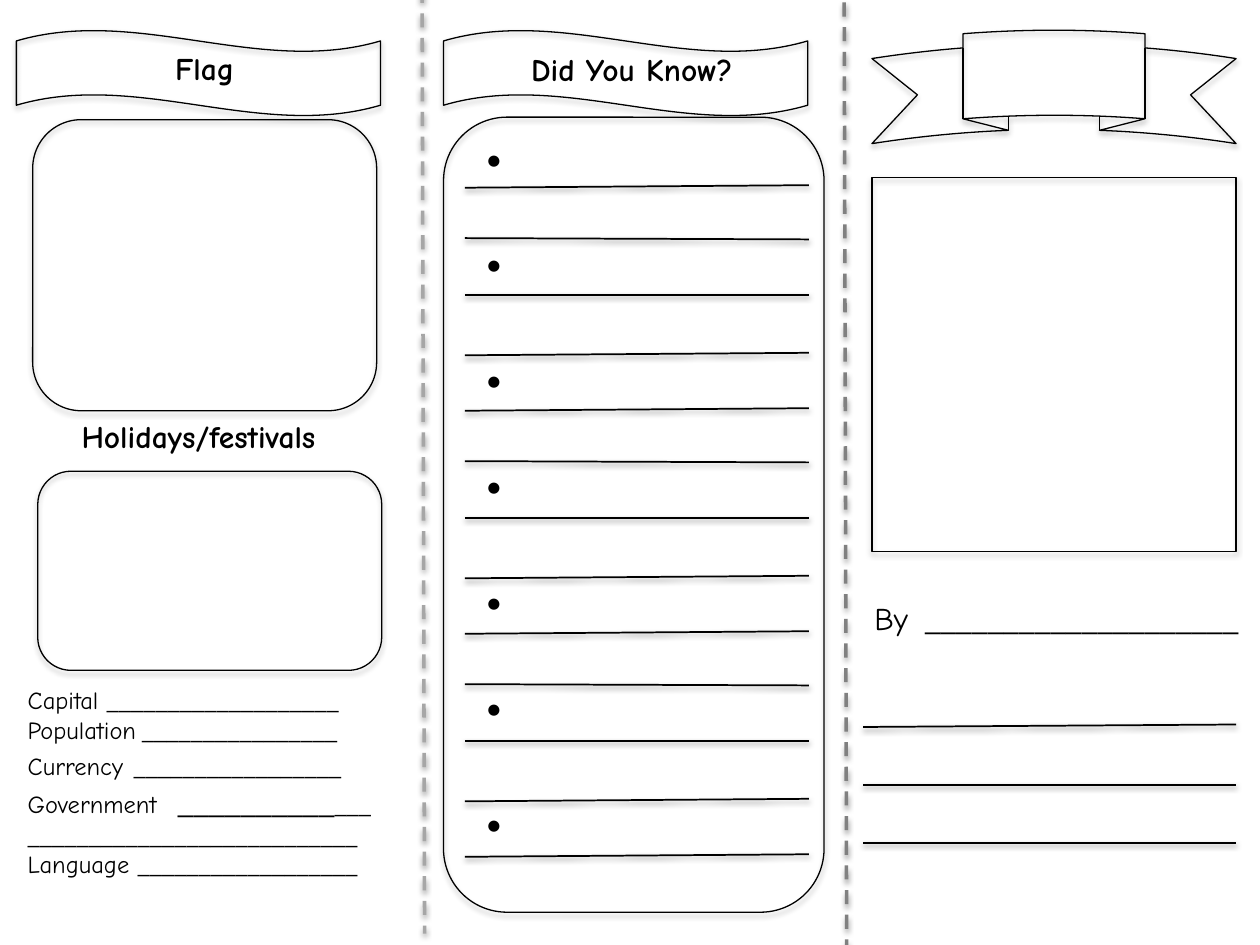
from dataclasses import dataclass
from typing import NamedTuple

from lxml import etree
from pptx import Presentation
from pptx.dml.color import RGBColor
from pptx.enum.dml import MSO_LINE
from pptx.enum.shapes import MSO_CONNECTOR, MSO_SHAPE
from pptx.enum.text import MSO_AUTO_SIZE, PP_ALIGN
from pptx.oxml.ns import qn
from pptx.util import Inches, Pt

BLACK = RGBColor(0x00, 0x00, 0x00)
GREY = RGBColor(0x80, 0x80, 0x80)
SILVER = RGBColor(0xA6, 0xA6, 0xA6)
ROUND = MSO_SHAPE.ROUNDED_RECTANGLE
RECT = MSO_SHAPE.RECTANGLE
WAVE = MSO_SHAPE.WAVE
RIBBON = MSO_SHAPE.CURVED_UP_RIBBON
STRAIGHT = MSO_CONNECTOR.STRAIGHT
DASH = MSO_LINE.DASH
GROW = MSO_AUTO_SIZE.SHAPE_TO_FIT_TEXT
LEFT = PP_ALIGN.LEFT
CENTER = PP_ALIGN.CENTER

HAND = "Comic Neue"
PLAIN = "Calibri"
CELL = 0.1
COLS, ROWS = 100, 75


class Area(NamedTuple):
    col: float
    row: float
    wide: float
    high: float


class Span(NamedTuple):
    col: float
    row: float
    end_col: float
    end_row: float


class Piece(NamedTuple):
    text: str
    font: str
    size: float
    bold: bool = False


@dataclass
class Frame:
    kind: int
    area: Area


@dataclass
class Rule:
    span: Span
    color: RGBColor = BLACK
    width: float = 1
    dashed: bool = False


@dataclass
class Line:
    pieces: list[Piece]
    tab: float = 0


@dataclass
class Label:
    area: Area
    lines: list[Line]
    align: int = LEFT


def cells(count: float) -> int:
    return Inches(count * CELL)


def shade(item, drop: float, alpha: int) -> None:
    effects = etree.SubElement(item._element.spPr, qn("a:effectLst"))
    shadow = etree.SubElement(
        effects, qn("a:outerShdw"), blurRad=str(Pt(3.1)), dist=str(Pt(drop)),
        dir="5400000", rotWithShape="0")
    color = etree.SubElement(shadow, qn("a:srgbClr"), val=str(BLACK))
    etree.SubElement(color, qn("a:alpha"), val=str(alpha * 1000))


def draw_frame(slide, frame: Frame) -> None:
    shape = slide.shapes.add_shape(frame.kind, *map(cells, frame.area))
    shape.fill.background()
    shape.line.color.rgb = BLACK
    shape.line.width = Pt(0.75)
    shade(shape, 1.8, 35)


def draw_rule(slide, rule: Rule) -> None:
    line = slide.shapes.add_connector(STRAIGHT, *map(cells, rule.span))
    line.line.color.rgb = rule.color
    line.line.width = Pt(rule.width)
    if rule.dashed:
        line.line.dash_style = DASH
    shade(line, 1.6, 38)


def draw_label(slide, label: Label) -> None:
    frame = slide.shapes.add_textbox(*map(cells, label.area)).text_frame
    frame.word_wrap = True
    frame.auto_size = GROW
    frame.margin_left = frame.margin_right = Inches(0.09)
    frame.margin_top = frame.margin_bottom = Inches(0.04)
    for index, line in enumerate(label.lines):
        para = frame.add_paragraph() if index else frame.paragraphs[0]
        para.alignment = label.align
        if line.tab:
            tabs = etree.SubElement(para._p.get_or_add_pPr(), qn("a:tabLst"))
            etree.SubElement(tabs, qn("a:tab"), pos=str(cells(line.tab)), algn="l")
        for piece in line.pieces:
            run = para.add_run()
            run.text = piece.text
            run.font.name = piece.font
            run.font.size = Pt(piece.size)
            run.font.bold = piece.bold
            run.font.color.rgb = BLACK


def title(text: str, area: Area) -> Label:
    return Label(area, [Line([Piece(text, HAND, 18, True)])], CENTER)


def blank(count: int, size: float = 14) -> Piece:
    return Piece("_" * count, PLAIN, size)


FRAMES = [
    Frame(ROUND, Area(2.6, 9.5, 27.3, 23.1)),
    Frame(RIBBON, Area(69.2, 2.4, 28.9, 9)),
    Frame(ROUND, Area(35.2, 9.3, 30.2, 63.1)),
    Frame(WAVE, Area(35.2, 2.4, 28.9, 6.8)),
    Frame(WAVE, Area(1.3, 2.4, 28.9, 6.8)),
    Frame(ROUND, Area(3, 37.4, 27.3, 15.8)),
    Frame(RECT, Area(69.2, 14.1, 28.9, 29.7)),
]

FOLDS = [
    Rule(Span(33.5, -0.9, 33.7, 74.1), SILVER, 2, True),
    Rule(Span(67, 0.2, 67.2, 75.2), GREY, 2, True),
]
STEPS = [(0, -0.2), (4, 0.1), (8.5, 0), (13.3, -0.2)]


def fact_rule(index: int) -> Rule:
    group, place = divmod(index, len(STEPS))
    step, tilt = STEPS[place]
    row = 14.9 + 17.7 * group + step
    return Rule(Span(36.9, row, 64.2, row + tilt))


def fact_dot(index: int) -> Label:
    group, place = divmod(index, 2)
    row = 10.6 + 17.6 * group + 8.4 * place
    return Label(Area(36.9, row, 4.6, 3.9), [Line([Piece("•", PLAIN, 18)])], CENTER)


NAMES = [Rule(Span(68.5, 57.7 + 4.6 * n, 98.1, 57.5 + 4.6 * n + 0.2 * (n > 0)))
         for n in range(3)]
RULES = FOLDS + [fact_rule(n) for n in range(13)] + NAMES

LABELS = [
    title("Flag", Area(2.6, 3.5, 27.3, 3.9)),
    title("Did You Know?", Area(36.5, 3.6, 27.3, 3.9)),
    title("Holidays/festivals", Area(1.3, 32.7, 28.9, 3.9)),
    Label(Area(68.5, 47.1, 31.3, 3.9),
          [Line([Piece("By\t", HAND, 18), blank(20, 18)], 4)]),
    Label(Area(1.3, 54, 30, 19.4), [
        Line([Piece("Capital ", HAND, 14), blank(19)]),
        Line([Piece("Population", HAND, 14), Piece(" ", PLAIN, 14), blank(16)]),
        Line([Piece("Currency", HAND, 14), Piece(" ", HAND, 18), blank(17)]),
        Line([Piece("Government", HAND, 14), Piece("\t", HAND, 18),
              blank(10, 18), blank(3)], 11.9),
        Line([blank(27)]),
        Line([Piece("Language ", HAND, 14), blank(18)]),
    ]),
] + [fact_dot(n) for n in range(7)]


def main() -> None:
    deck = Presentation()
    deck.slide_width = cells(COLS)
    deck.slide_height = cells(ROWS)
    slide = deck.slides.add_slide(deck.slide_layouts[6])
    for frame in FRAMES:
        draw_frame(slide, frame)
    for rule in RULES:
        draw_rule(slide, rule)
    for label in LABELS:
        draw_label(slide, label)
    deck.save("out.pptx")


if __name__ == "__main__":
    main()
